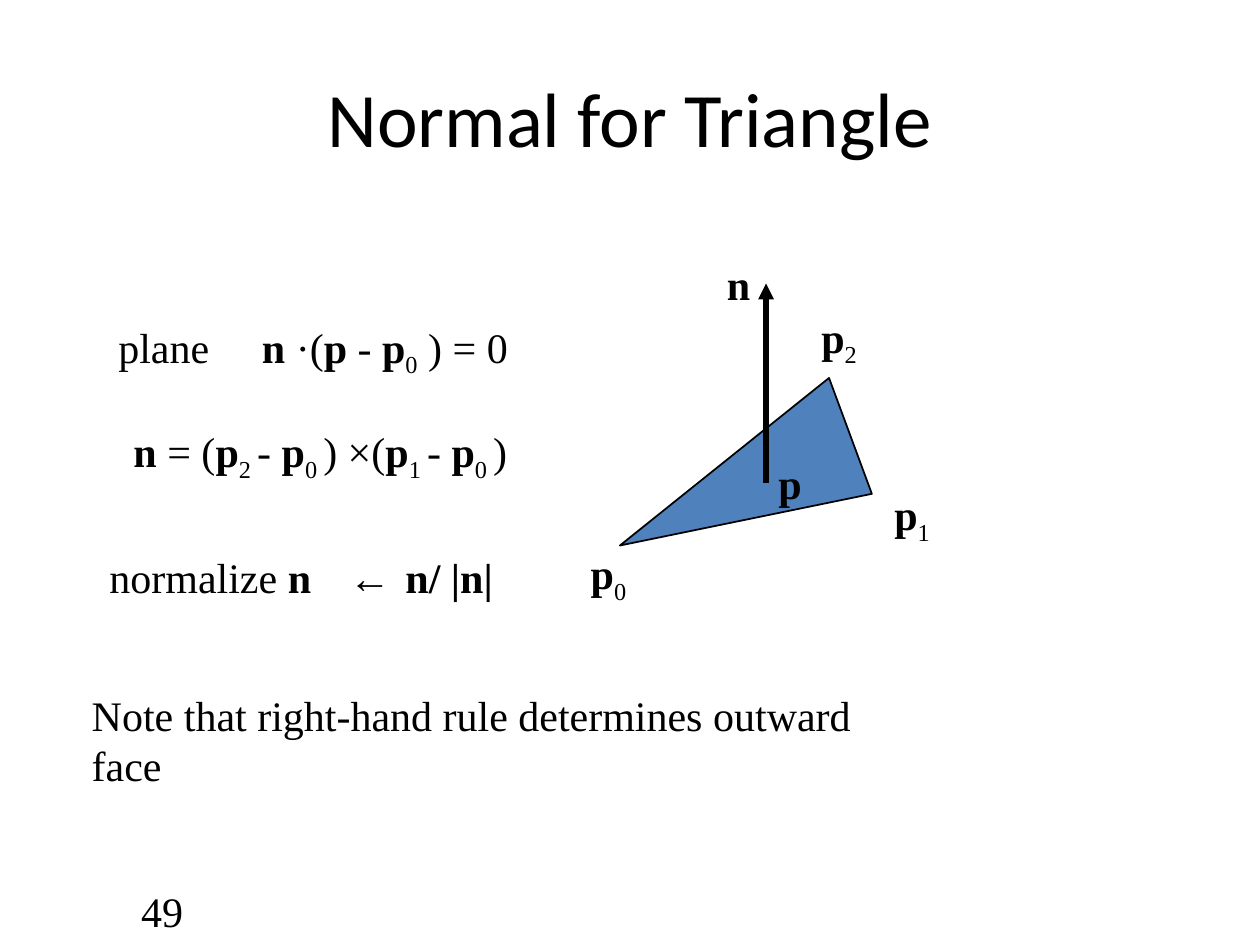
from pptx import Presentation
from pptx.dml.color import RGBColor
from pptx.enum.text import MSO_ANCHOR, PP_ALIGN
from pptx.util import Inches, Pt
from lxml.etree import SubElement
from pptx.oxml.ns import qn

COLORS = {"ink": "000000", "fill": "4F81BD"}
INK = RGBColor.from_string(COLORS["ink"])


def style(run, size, face):
    run.font.size = Pt(size)
    run.font.name = face
    run.font.color.rgb = INK


def label(left, top, width, height, text, wrap=False, tabs=()):
    box = slide.shapes.add_textbox(
        Inches(left), Inches(top), Inches(width), Inches(height))
    frame = box.text_frame
    frame.word_wrap = wrap
    para = frame.paragraphs[0]
    for part in text.split("~"):
        run = para.add_run()
        run.text = part.lstrip("*_")
        style(run, 24, "Times New Roman")
        run.font.bold = part.startswith("*")
        if part.startswith("_"):
            run._r.get_or_add_rPr().set("baseline", "-25000")
    if tabs:
        stops = SubElement(para._p.get_or_add_pPr(), qn("a:tabLst"))
        for pos in tabs:
            SubElement(stops, qn("a:tab"), pos=str(Inches(pos)), algn="l")
    return frame


prs = Presentation()
prs.slide_width, prs.slide_height = Inches(10), Inches(7.5)
slide = prs.slides.add_slide(prs.slide_layouts[5])

num = label(0.5, 7.08, 2.33, 0.3, "49", wrap=True)
num.vertical_anchor = MSO_ANCHOR.MIDDLE
num.margin_left = Inches(0.62)

title = slide.shapes.title
title.left, title.top = Inches(0.5), Inches(0.3)
title.width, title.height = Inches(9), Inches(1.25)
title.text_frame.text = "Normal for Triangle"
title.text_frame.vertical_anchor = MSO_ANCHOR.MIDDLE
head = title.text_frame.paragraphs[0]
head.alignment = PP_ALIGN.CENTER
style(head.runs[0], 44, "Calibri")

path = slide.shapes.build_freeform(Inches(4.92), Inches(4.33))
path.add_line_segments(
    [(Inches(x), Inches(y)) for x, y in [(6.58, 3), (6.92, 3.92)]], close=True)
face = path.convert_to_shape()
face.shadow.inherit = False
face.fill.solid()
face.fill.fore_color.rgb = RGBColor.from_string(COLORS["fill"])
face.line.color.rgb = INK
face.line.width = Pt(1)

label(4.59, 4.3, 0.5, 0.5, "*p~_0")
label(7, 3.83, 0.5, 0.58, "*p~_1").paragraphs[0].space_before = Pt(4.8)
label(6.42, 2.42, 0.5, 0.58, "*p~_2")

arrow = slide.shapes.add_connector(
    1, Inches(6.08), Inches(3.83), Inches(6.08), Inches(2.25))
arrow.line.color.rgb = INK
arrow.line.width = Pt(3)
SubElement(arrow.line._get_or_add_ln(), qn("a:tailEnd"), type="triangle")
SubElement(arrow._element.spPr, qn("a:effectLst"))

label(5.67, 2, 0.39, 0.5, "*n")
label(0.84, 2.5, 3.38, 0.5, "plane\t~*n ~·(~*p~ - ~*p~_0~ ) = 0",
      wrap=True, tabs=[1.14])
cross = label(0, 3.33, 5.17, 0.9,
              "*n~ = (~*p~_2 ~- ~*p~_0 ~) ×(~*p~_1 ~- ~*p~_0 ~)", wrap=True)
cross.margin_left = Inches(1.06)
label(0.77, 4.33, 3.36, 0.5, "normalize ~*n\t←\tn/ |n|",
      wrap=True, tabs=[1.9, 2.35])
label(6.08, 3.58, 0.39, 0.5, "*p")
label(0.63, 5.42, 6.86, 0.5,
      "Note that right-hand rule determines outward face", wrap=True)

prs.save("out.pptx")
